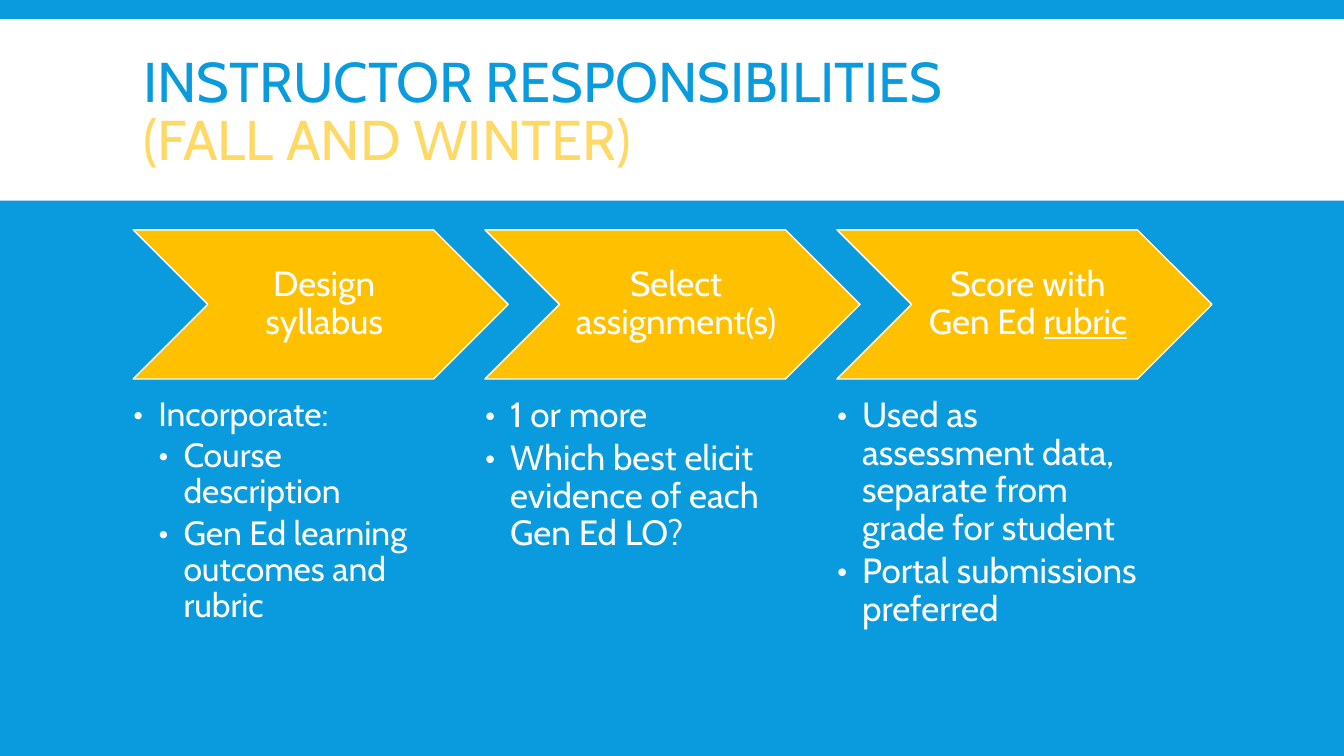
import pptx
import pptx.dml.color
import pptx.enum.shapes
import pptx.enum.text
import pptx.oxml.ns
import pptx.util
from lxml import etree

Inches, Pt = pptx.util.Inches, pptx.util.Pt
SHAPE = pptx.enum.shapes.MSO_SHAPE
ALIGN = pptx.enum.text.PP_ALIGN
ANCHOR = pptx.enum.text.MSO_ANCHOR

COLORS = {"blue": "099BDD", "white": "FFFFFF", "gold": "FFC000", "pale gold": "FFD966"}
FONT = "Cabin"
INDENT = 0.25

# Each step: heading as (text, underlined) spans, list size, list as (level, text)
STEPS = [
    ([("Design syllabus", False)], 24,
     [(1, "Incorporate:"), (2, "Course description"),
      (2, "Gen Ed learning outcomes and rubric")]),
    ([("Select assignment(s)", False)], 25,
     [(1, "1 or more"), (1, "Which best elicit evidence of each Gen Ed LO?")]),
    ([("Score with Gen Ed ", False), ("rubric", True)], 25,
     [(1, "Used as assessment data, separate from grade for student"),
      (1, "Portal submissions preferred")]),
]


def rgb(name):
    return pptx.dml.color.RGBColor.from_string(COLORS[name])


def apply(target, **values):
    for name, value in values.items():
        setattr(target, name, value)


def place(shape, left, top, width, height):
    apply(shape, left=Inches(left), top=Inches(top),
          width=Inches(width), height=Inches(height))


def set_frame(frame, anchor, insets):
    """Fix wrapping, anchor and left, top, right, bottom insets of a text frame."""
    left, top, right, bottom = map(Inches, insets)
    apply(frame, word_wrap=True, auto_size=pptx.enum.text.MSO_AUTO_SIZE.NONE,
          vertical_anchor=anchor, margin_left=left, margin_top=top,
          margin_right=right, margin_bottom=bottom)


def add_span(para, text, size, color, underline=False):
    span = para.add_run()
    span.text = text
    apply(span.font, name=FONT, size=Pt(size), bold=False, underline=underline)
    span.font.color.rgb = rgb(color)


def add_filled(page, kind, box, fill):
    shape = page.shapes.add_shape(kind, *map(Inches, box))
    shape.shadow.inherit = False
    shape.fill.solid()
    shape.fill.fore_color.rgb = rgb(fill)
    return shape


def add_bullet(para, level):
    properties = para._p.get_or_add_pPr()
    properties.set("marL", str(Inches(INDENT * level)))
    properties.set("indent", str(Inches(-INDENT)))
    for tag, name, value in (("a:buFont", "typeface", FONT), ("a:buChar", "char", "•")):
        etree.SubElement(properties, pptx.oxml.ns.qn(tag)).set(name, value)


def add_header(page, left, top, width, height):
    band = add_filled(page, SHAPE.RECTANGLE, (left, top, width, height), "white")
    band.line.fill.background()
    title = page.shapes.title
    title.element.addprevious(band.element)
    place(title, left + 1.32, top + 0.12, 10.7, 1.65)
    set_frame(title.text_frame, ANCHOR.MIDDLE, (0.1, 0.05, 0.1, 0.05))
    para = title.text_frame.paragraphs[0]
    apply(para, alignment=ALIGN.LEFT, line_spacing=0.85)
    add_span(para, "INSTRUCTOR RESPONSIBILITIES ", 40, "blue")
    para.add_line_break()
    add_span(para, "(FALL AND WINTER)", 40, "pale gold")


def add_step(page, left, top, heading, size, items):
    """Draw a chevron with its heading and the bulleted list below it."""
    chevron = add_filled(page, SHAPE.CHEVRON, (left, top, 3.72, 1.48), "gold")
    chevron.line.color.rgb = rgb("white")
    chevron.line.width = Pt(1)
    set_frame(chevron.text_frame, ANCHOR.MIDDLE, (0.11, 0.04, 0.04, 0.04))
    para = chevron.text_frame.paragraphs[0]
    apply(para, alignment=ALIGN.CENTER, line_spacing=0.9)
    for text, underline in heading:
        add_span(para, text, 25, "white", underline)

    details = page.shapes.add_textbox(
        Inches(left), Inches(top + 1.66), Inches(2.98), Inches(2.78))
    frame = details.text_frame
    set_frame(frame, ANCHOR.TOP, (0, 0, 0, 0))
    for index, (level, text) in enumerate(items):
        para = frame.add_paragraph() if index else frame.paragraphs[0]
        apply(para, level=level, alignment=ALIGN.LEFT, line_spacing=0.9,
              space_before=Pt(0), space_after=Pt(size * 0.15))
        add_bullet(para, level)
        add_span(para, text, size, "white")


def main():
    deck = pptx.Presentation()
    apply(deck, slide_width=Inches(13.33), slide_height=Inches(7.5))
    page = deck.slides.add_slide(deck.slide_layouts[5])
    page.background.fill.solid()
    page.background.fill.fore_color.rgb = rgb("blue")
    add_header(page, 0, 0.19, 13.33, 1.8)
    for index, step in enumerate(STEPS):
        add_step(page, 1.32 + 3.49 * index, 2.28, *step)
    deck.save("out.pptx")


if __name__ == "__main__":
    main()
